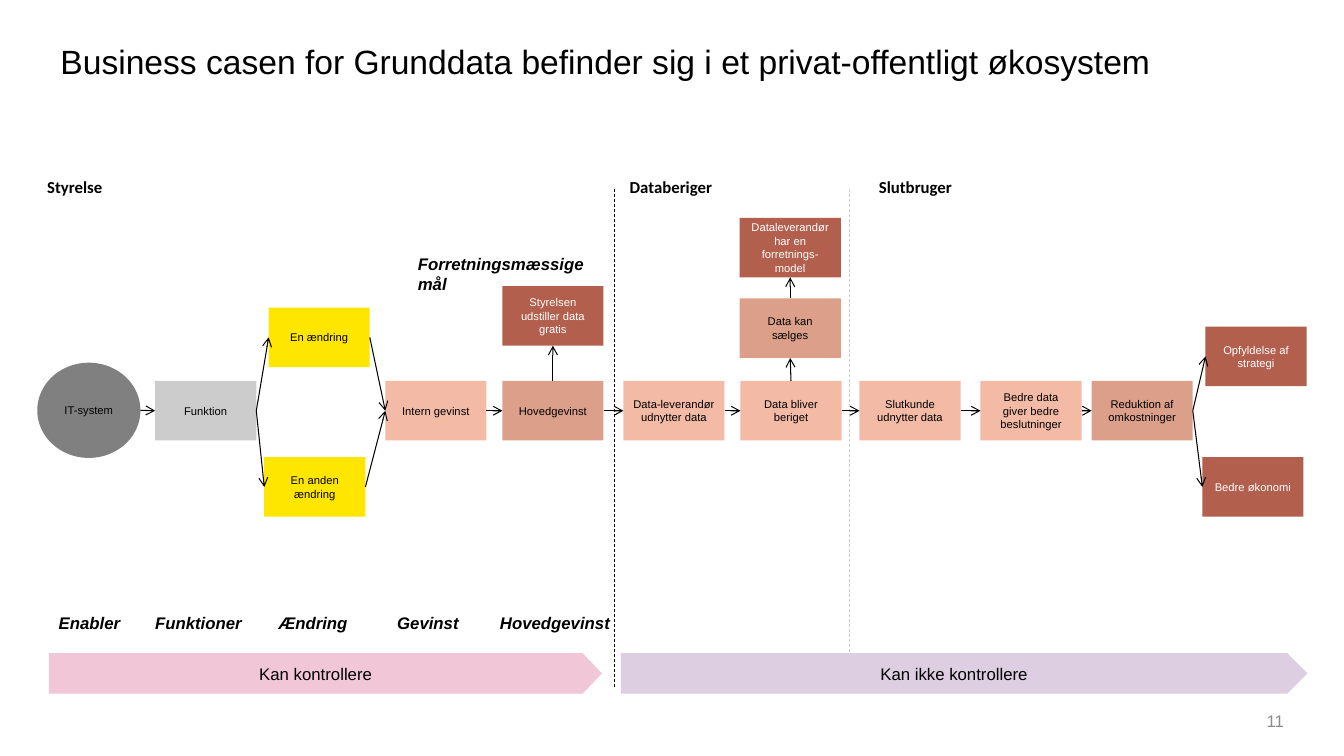
from dataclasses import dataclass

from lxml import etree
from pptx import Presentation
from pptx.dml.color import RGBColor
from pptx.enum.dml import MSO_LINE
from pptx.enum.shapes import MSO_CONNECTOR, MSO_SHAPE
from pptx.enum.text import MSO_ANCHOR, MSO_AUTO_SIZE, PP_ALIGN
from pptx.oxml.ns import qn
from pptx.shapes.autoshape import Shape
from pptx.shapes.connector import Connector
from pptx.slide import Slide
from pptx.util import Cm, Pt

RECTANGLE, ELLIPSE, ARROW = MSO_SHAPE.RECTANGLE, MSO_SHAPE.OVAL, MSO_SHAPE.RIGHT_ARROW
STRAIGHT, DASH = MSO_CONNECTOR.STRAIGHT, MSO_LINE.DASH
LEFT, CENTER, RIGHT = PP_ALIGN.LEFT, PP_ALIGN.CENTER, PP_ALIGN.RIGHT
TOP, MIDDLE = MSO_ANCHOR.TOP, MSO_ANCHOR.MIDDLE

BLACK = RGBColor(0x00, 0x00, 0x00)
WHITE = RGBColor(0xFF, 0xFF, 0xFF)
GREY = RGBColor(0x80, 0x80, 0x80)
LIGHT_GREY = RGBColor(0xCC, 0xCC, 0xCC)
NUMBER_GREY = RGBColor(0x8C, 0x8C, 0x8C)
YELLOW = RGBColor(0xFF, 0xE6, 0x00)
PEACH = RGBColor(0xF0, 0xA4, 0x89)
RUST = RGBColor(0xBA, 0x43, 0x17)
BRICK = RGBColor(0xB2, 0x5F, 0x4D)
PINK = RGBColor(0xF1, 0xC7, 0xD7)
LILAC = RGBColor(0xDD, 0xCE, 0xE1)

OPACITY = {PEACH: 75, RUST: 50}
NODE_WIDTH, NODE_HEIGHT = 2.55, 1.5
MAIN_ROW = 9.6
# Connection sites of a rectangle
SITE_TOP, SITE_LEFT, SITE_BOTTOM, SITE_RIGHT = range(4)


@dataclass
class Node:
    text: str
    left: float
    fill: RGBColor
    top: float = MAIN_ROW
    width: float = NODE_WIDTH
    height: float = NODE_HEIGHT
    kind: int = RECTANGLE


@dataclass
class Link:
    start: str
    end: str
    upward: bool = False


@dataclass
class Label:
    text: str
    left: float
    top: float
    width: float
    height: float = 0.77
    font: str = "Arial"
    italic: bool = True
    bold: bool = True
    color: RGBColor = BLACK
    align: int = LEFT
    anchor: int = TOP


NODES = {
    "system": Node("IT-system", 0.94, GREY, 9.14, 2.6, 2.4, ELLIPSE),
    "function": Node("Funktion", 3.91, LIGHT_GREY),
    "change": Node("En ændring", 6.77, YELLOW, 7.75),
    "other change": Node("En anden ændring", 6.66, YELLOW, 11.52),
    "internal": Node("Intern gevinst", 9.71, PEACH),
    "main": Node("Hovedgevinst", 12.66, RUST),
    "free": Node("Styrelsen udstiller data gratis", 12.66, BRICK, 7.21),
    "supplier": Node("Data-leverandør udnytter data", 15.71, PEACH),
    "enriched": Node("Data bliver beriget", 18.66, PEACH),
    "sold": Node("Data kan sælges", 18.64, RUST, 7.52),
    "model": Node("Dataleverandør har en forretnings-model", 18.64, BRICK, 5.49),
    "customer": Node("Slutkunde udnytter data", 21.66, PEACH),
    "decisions": Node("Bedre data giver bedre beslutninger", 24.71, PEACH),
    "costs": Node("Reduktion af omkostninger", 27.51, RUST),
    "strategy": Node("Opfyldelse af strategi", 30.38, BRICK, 8.23),
    "economy": Node("Bedre økonomi", 30.3, BRICK, 11.52),
}

LINKS = [
    Link("system", "function"),
    Link("function", "change"),
    Link("function", "other change"),
    Link("change", "internal"),
    Link("other change", "internal"),
    Link("internal", "main"),
    Link("main", "free", upward=True),
    Link("main", "supplier"),
    Link("supplier", "enriched"),
    Link("enriched", "sold", upward=True),
    Link("sold", "model", upward=True),
    Link("enriched", "customer"),
    Link("customer", "decisions"),
    Link("decisions", "costs"),
    Link("costs", "strategy"),
    Link("costs", "economy"),
]

ACTORS = [("Styrelse", 0.94), ("Databeriger", 15.62), ("Slutbruger", 21.9)]
STAGES = [("Enabler", 1.23), ("Funktioner", 3.66), ("Ændring", 6.77),
          ("Gevinst", 9.76), ("Hovedgevinst", 12.35)]
LABELS = [
    *(Label(text, left, 4.32, 4.8, font="Calibri", italic=False) for text, left in ACTORS),
    *(Label(text, left, 15.32, 3.5) for text, left in STAGES),
    Label("Forretningsmæssige mål", 10.28, 6.27, 5.36, 1.28),
    Label("11", 28.8, 17.65, 3.81, 1.02, italic=False, bold=False,
          color=NUMBER_GREY, align=RIGHT, anchor=MIDDLE),
]

BANDS = [
    (Node("Kan kontrollere", 1.23, PINK, 16.46, 13.94, 1.02, ARROW), 0.475),
    (Node("Kan ikke kontrollere", 15.65, LILAC, 16.46, 17.3, 1.02, ARROW), 0.5),
]
DIVIDERS = [(15.47, BLACK), (21.41, LIGHT_GREY)]


def add_node(page: Slide, node: Node, size: int = 8) -> Shape:
    box = page.shapes.add_shape(node.kind, Cm(node.left), Cm(node.top),
                                Cm(node.width), Cm(node.height))
    box.shadow.inherit = False
    box.line.fill.background()
    box.fill.solid()
    box.fill.fore_color.rgb = node.fill
    if node.fill in OPACITY:
        color = box.fill._xPr.find(".//" + qn("a:srgbClr"))
        etree.SubElement(color, qn("a:alpha"), val=str(OPACITY[node.fill] * 1000))
    frame = box.text_frame
    frame.word_wrap = True
    frame.vertical_anchor = MIDDLE
    frame.margin_left = frame.margin_right = Cm(0.24)
    para = frame.paragraphs[0]
    para.text = node.text
    para.alignment = CENTER
    para.font.name, para.font.size = "Arial", Pt(size)
    para.font.color.rgb = WHITE if node.fill == BRICK else BLACK
    return box


def add_line(page: Slide, x1: int, y1: int, x2: int, y2: int,
             color: RGBColor, width: float) -> Connector:
    line = page.shapes.add_connector(STRAIGHT, x1, y1, x2, y2)
    line.line.color.rgb = color
    line.line.width = Pt(width)
    etree.SubElement(line._element.spPr, qn("a:effectLst"))
    return line


def add_link(page: Slide, link: Link, boxes: dict[str, Shape]) -> None:
    start, end = boxes[link.start], boxes[link.end]
    leave, enter = (SITE_TOP, SITE_BOTTOM) if link.upward else (SITE_RIGHT, SITE_LEFT)
    line = add_line(page, start.left + start.width, start.top + start.height // 2,
                    end.left, end.top + end.height // 2, BLACK, 0.75)
    if NODES[link.start].kind == RECTANGLE:
        line.begin_connect(start, leave)
    line.end_connect(end, enter)
    etree.SubElement(line.line._get_or_add_ln(), qn("a:tailEnd"), type="arrow")


def add_label(page: Slide, label: Label) -> None:
    box = page.shapes.add_textbox(Cm(label.left), Cm(label.top),
                                  Cm(label.width), Cm(label.height))
    frame = box.text_frame
    frame.word_wrap = True
    frame.vertical_anchor = label.anchor
    para = frame.paragraphs[0]
    para.text = label.text
    para.alignment = label.align
    font = para.font
    font.name, font.size = label.font, Pt(12)
    font.bold, font.italic = label.bold, label.italic
    font.color.rgb = label.color


def add_title(page: Slide, text: str) -> None:
    title = page.shapes.title
    title.left, title.top, title.width, title.height = Cm(1.27), Cm(1.02), Cm(28.17), Cm(2.36)
    frame = title.text_frame
    frame.auto_size = MSO_AUTO_SIZE.NONE
    frame.vertical_anchor = TOP
    para = frame.paragraphs[0]
    para.text = text
    para.alignment = LEFT
    para.line_spacing = 0.9
    para.font.name, para.font.size = "Arial", Pt(24)
    para.font.color.rgb = BLACK


def main() -> None:
    deck = Presentation()
    deck.slide_width, deck.slide_height = Cm(33.87), Cm(19.05)
    page = deck.slides.add_slide(deck.slide_layouts[5])
    add_title(page, "Business casen for Grunddata befinder sig i et privat-offentligt økosystem")

    # Borders between the actors
    for x, color in DIVIDERS:
        divider = add_line(page, Cm(x), Cm(17.3), Cm(x), Cm(4.7), color, 0.5)
        divider.line.dash_style = DASH

    # Benefit chain
    boxes = {key: add_node(page, node) for key, node in NODES.items()}
    for link in LINKS:
        add_link(page, link, boxes)

    # Headings, stages and page number
    for label in LABELS:
        add_label(page, label)

    # Bands of control
    for band, tip in BANDS:
        arrow = add_node(page, band, size=12)
        arrow.adjustments[0], arrow.adjustments[1] = 1, tip

    deck.save("out.pptx")


if __name__ == "__main__":
    main()
